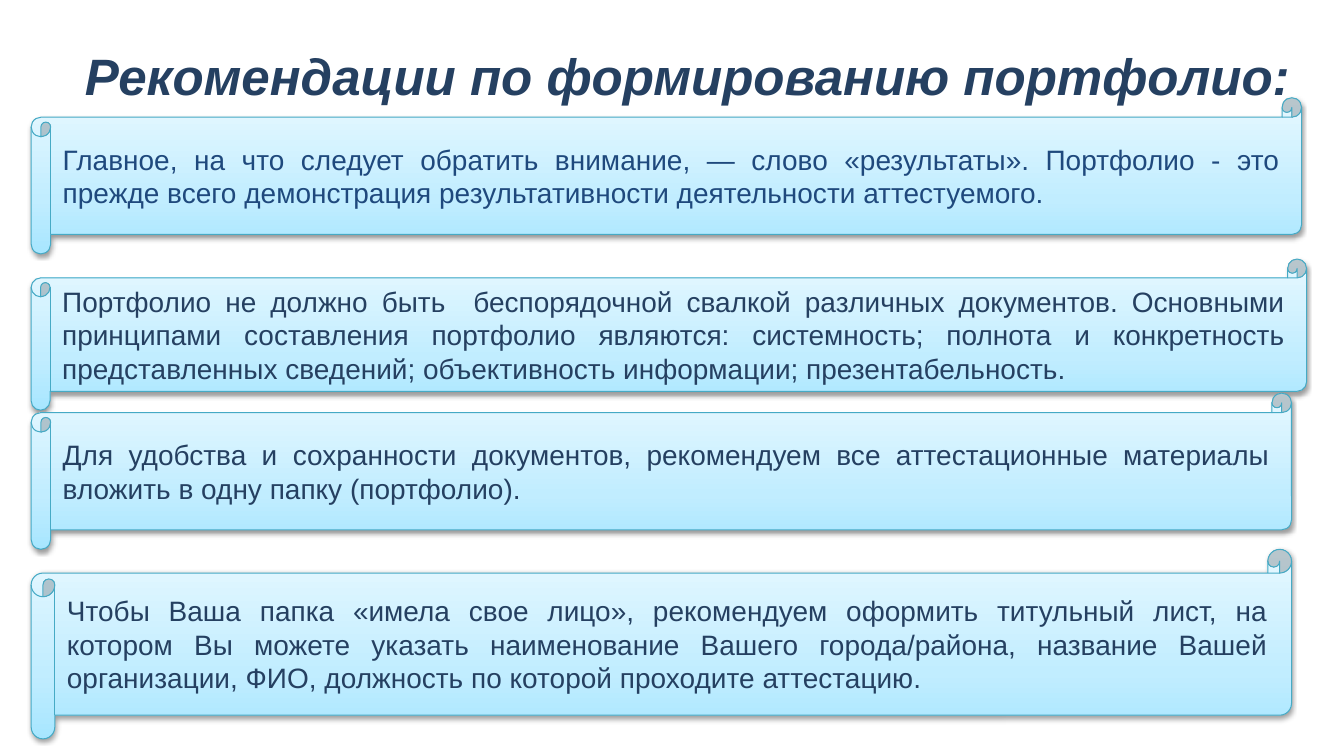
from dataclasses import dataclass

from pptx import Presentation
from pptx.dml.color import RGBColor
from pptx.enum.shapes import MSO_SHAPE
from pptx.enum.text import MSO_ANCHOR, MSO_AUTO_SIZE, PP_ALIGN
from pptx.oxml import parse_xml
from pptx.oxml.ns import nsdecls
from pptx.util import Inches, Pt


@dataclass(frozen=True)
class Theme:
    font: str = "Arial"
    navy: str = "254061"
    blue: str = "1F497D"
    outline: str = "46AAC5"
    shadow: str = "000000"
    gradient: tuple = ((0, "A7E6FF"), (35, "C1EDFF"), (100, "E7F8FF"))
    title_size: float = 36.5
    body_size: float = 20


THEME = Theme()
WIDTH, HEIGHT = Inches(13.34), Inches(7.5)
LEFT = 2.32  # shared left edge, percent of the slide width

# Scrolls: top, width, height in percent of the slide, text colour, text
SCROLLS = [
    (12.93, 94.53, 20.67, THEME.blue,
     "Главное, на что следует обратить внимание, — слово «результаты». "
     "Портфолио - это прежде всего демонстрация результативности "
     "деятельности аттестуемого."),
    (34.27, 94.9, 20, THEME.navy,
     "Портфолио не должно быть  беспорядочной свалкой различных документов. "
     "Основными принципами составления портфолио являются: системность; "
     "полнота и конкретность представленных сведений; объективность "
     "информации; презентабельность."),
    (52, 93.78, 20.67, THEME.navy,
     "Для удобства и сохранности документов, рекомендуем все аттестационные "
     "материалы вложить в одну папку (портфолио)."),
    (72.67, 93.78, 25.07, THEME.navy,
     "Чтобы Ваша папка «имела свое лицо», рекомендуем оформить титульный "
     "лист, на котором Вы можете указать наименование Вашего города/района, "
     "название Вашей организации, ФИО, должность по которой проходите "
     "аттестацию."),
]


def box(left, top, width, height):
    """Turn percentages of the slide into a frame."""
    return (int(WIDTH * left / 100), int(HEIGHT * top / 100),
            int(WIDTH * width / 100), int(HEIGHT * height / 100))


def write(tf, text, *, size, color, align, anchor=MSO_ANCHOR.MIDDLE,
          bold=False, italic=False, inset_top=0.06):
    tf.word_wrap = True
    tf.auto_size = MSO_AUTO_SIZE.NONE
    tf.vertical_anchor = anchor
    tf.margin_left = tf.margin_right = Inches(0.12)
    tf.margin_top, tf.margin_bottom = Inches(inset_top), Inches(0.06)
    p = tf.paragraphs[0]
    p.alignment = align
    r = p.add_run()
    r.text = text
    r.font.name, r.font.size = THEME.font, Pt(size)
    r.font.bold, r.font.italic = bold, italic
    r.font.color.rgb = RGBColor.from_string(color)


def fill_gradient(sp):
    """Three-stop gradient running from the bottom edge to the top."""
    sp.fill.gradient()
    sp.fill.gradient_angle = 90
    stops = "".join(
        f'<a:gs pos="{pos * 1000}"><a:srgbClr val="{color}"/></a:gs>'
        for pos, color in THEME.gradient)
    old = sp._element.spPr.find(".//{*}gsLst")
    old.getparent().replace(
        old, parse_xml(f'<a:gsLst {nsdecls("a")}>{stops}</a:gsLst>'))


def drop_shadow(sp):
    sp.shadow.inherit = False
    sp._element.spPr.find("{*}effectLst").append(parse_xml(
        f'<a:outerShdw {nsdecls("a")} blurRad="{Pt(3.1)}" dist="{Pt(1.6)}" '
        f'dir="5400000" rotWithShape="0"><a:srgbClr val="{THEME.shadow}">'
        '<a:alpha val="38000"/></a:srgbClr></a:outerShdw>'))


def add_title(s, text):
    title = s.shapes.title
    title.left, title.top, title.width, title.height = box(
        LEFT, 4.53, 100 - LEFT, 9.73)
    write(title.text_frame, text, size=THEME.title_size, color=THEME.navy,
          align=PP_ALIGN.CENTER, anchor=MSO_ANCHOR.TOP, bold=True,
          italic=True, inset_top=0.1)


def add_scroll(s, top, width, height, color, text):
    sp = s.shapes.add_shape(MSO_SHAPE.HORIZONTAL_SCROLL,
                            *box(LEFT, top, width, height))
    fill_gradient(sp)
    sp.line.color.rgb = RGBColor.from_string(THEME.outline)
    sp.line.width = Pt(0.75)
    drop_shadow(sp)
    write(sp.text_frame, text, size=THEME.body_size, color=color,
          align=PP_ALIGN.JUSTIFY)


def main():
    prs = Presentation()
    prs.slide_width, prs.slide_height = WIDTH, HEIGHT
    s = prs.slides.add_slide(prs.slide_layouts.get_by_name("Title Only"))

    # Heading
    add_title(s, "Рекомендации по формированию портфолио:")

    # Recommendations
    for scroll in SCROLLS:
        add_scroll(s, *scroll)

    prs.save("out.pptx")


if __name__ == "__main__":
    main()
